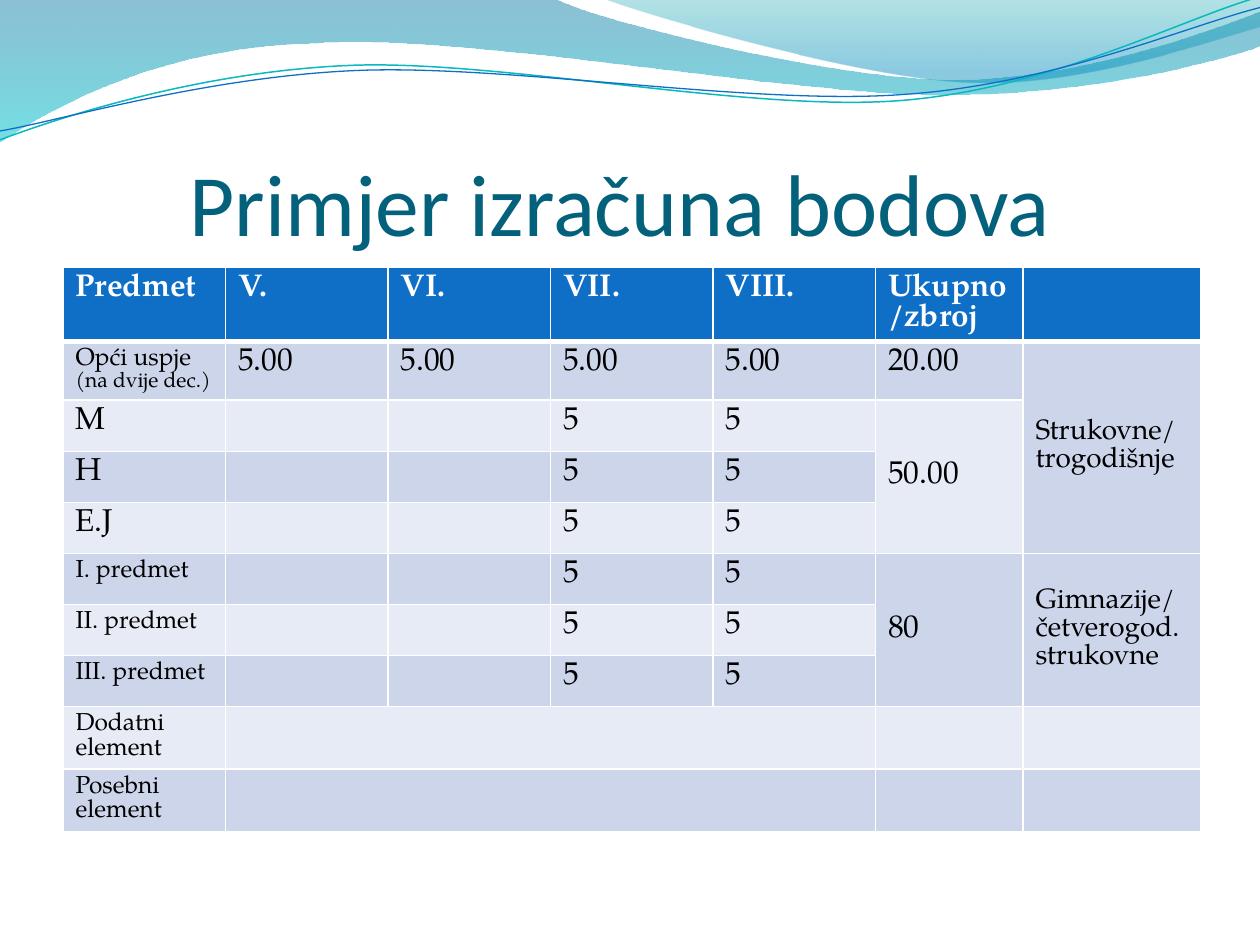
from dataclasses import dataclass

from lxml import etree
from pptx import Presentation
from pptx.dml.color import RGBColor
from pptx.enum.text import MSO_ANCHOR, MSO_AUTO_SIZE, PP_ALIGN
from pptx.oxml.ns import qn
from pptx.util import Inches, Pt

BOTTOM = MSO_ANCHOR.BOTTOM
MIDDLE = MSO_ANCHOR.MIDDLE
CENTER = PP_ALIGN.CENTER
NO_AUTOFIT = MSO_AUTO_SIZE.NONE
TITLE_ONLY_LAYOUT = 5
UNITS_PER_INCH = 100


@dataclass(frozen=True)
class Theme:
    title_font: str = "Calibri"
    body_font: str = "TeX Gyre Pagella"
    title_color: str = "04617B"
    blue: str = "0F6FC6"
    teal: str = "0AB8BF"
    white: str = "FFFFFF"
    black: str = "000000"
    bands: tuple = ("E7EBF5", "CCD5EA")
    title_size: int = 50
    body_size: int = 18
    group_size: int = 16
    label_size: int = 14
    note_size: int = 12


THEME = Theme()

BACK_WAVE = [
    (0, 0), (4.4, -0.01),
    (4.76, 0.17, 6.64, 0.63, 7.58, 0.63), (8.53, 0.63, 9.58, 0.26, 10, 0.09),
    (10.01, 0.36),
    (9.83, 0.44, 8.7, 0.76, 7.46, 0.75), (6.22, 0.75, 3.82, 0.28, 2.57, 0.34),
    (1.29, 0.36, 0.46, 0.83, -0.01, 1.13), (0, 0),
]
FRONT_WAVE = [
    (4.79, -0.01),
    (5.09, 0.11, 6.82, 0.62, 7.69, 0.65), (8.56, 0.69, 9.61, 0.32, 10, 0.21),
    (10, 0), (4.79, -0.01),
]
TEAL_LINE = [
    (0, 1.11),
    (0.48, 0.93, 1.58, 0.57, 2.77, 0.52), (3.95, 0.47, 5.93, 0.89, 7.13, 0.8),
    (8.33, 0.71, 9.38, 0.15, 9.98, -0.02),
]
BLUE_LINE = [
    (0, 1.04),
    (0.47, 0.96, 1.64, 0.61, 2.83, 0.56), (4.03, 0.51, 5.97, 0.84, 7.17, 0.75),
    (8.36, 0.67, 9.41, 0.21, 10, 0.06),
]

COLUMN_WIDTHS = [1.29] * 5 + [1.17, 1.41]
ROW_HEIGHT = Pt(29.2)
GRADES = ["", "", "5", "5"]
ROWS = [
    ["Predmet", "V.", "VI.", "VII.", "VIII.", "Ukupno/zbroj"],
    ["Opći uspje\n(na dvije dec.)"] + ["5.00"] * 4 + ["20.00", "Strukovne/ trogodišnje"],
    ["M", *GRADES, "50.00"],
    ["H", *GRADES],
    ["E.J", *GRADES],
    ["I. predmet", *GRADES, "80", "Gimnazije/ četverogod. strukovne"],
    ["II. predmet", *GRADES],
    ["III. predmet", *GRADES],
    ["Dodatni element"],
    ["Posebni element"],
]
MERGES = [
    ((1, 6), (4, 6)), ((2, 5), (4, 5)), ((5, 5), (7, 5)), ((5, 6), (7, 6)),
    ((8, 1), (8, 4)), ((9, 1), (9, 4)),
]
SMALL_LABEL_ROWS = {1, 5, 6, 7, 8, 9}
GROUP_COLUMN = 6


def rgb(value):
    return RGBColor.from_string(value)


def segment_points(segment):
    units = [round(value * UNITS_PER_INCH) for value in segment]
    return list(zip(units[::2], units[1::2]))


def add_curve(slide, segments, close):
    start, *points = [point for segment in segments for point in segment_points(segment)]
    builder = slide.shapes.build_freeform(*start, scale=Inches(1) / UNITS_PER_INCH)
    builder.add_line_segments(points, close=close)
    shape = builder.convert_to_shape()
    shape.shadow.inherit = False
    steps = iter(list(shape.element.spPr.iter(qn("a:lnTo"))))
    for segment in segments[1:]:
        step = next(steps)
        if len(segment) == 6:
            curve = etree.Element(qn("a:cubicBezTo"))
            step.addprevious(curve)
            for part in (step, next(steps), next(steps)):
                curve.append(part[0])
                part.getparent().remove(part)
    return shape


def add_wave(slide, segments, stops):
    shape = add_curve(slide, segments, True)
    shape.line.fill.background()
    shape.fill.gradient()
    shape.fill.gradient_angle = 270
    for stop, (position, color, _) in zip(shape.fill.gradient_stops, stops):
        stop.position = position
        stop.color.rgb = rgb(color)
    for element, (_, _, opacity) in zip(shape.element.spPr.iter(qn("a:srgbClr")), stops):
        etree.SubElement(element, qn("a:alpha"), val=str(opacity * 1000))


def add_wave_line(slide, segments, color, width):
    shape = add_curve(slide, segments, False)
    shape.fill.background()
    shape.line.color.rgb = rgb(color)
    shape.line.width = Pt(width)


def style_paragraph(paragraph, font_name, size, color, bold=False):
    font = paragraph.font
    font.name = font_name
    font.size = Pt(size)
    font.bold = bold
    font.color.rgb = rgb(color)


def set_title(slide, text):
    title = slide.shapes.title
    title.left, title.top = Inches(0.5), Inches(0.77)
    title.width, title.height = Inches(9), Inches(1.25)
    frame = title.text_frame
    frame.text = text
    frame.word_wrap = True
    frame.auto_size = NO_AUTOFIT
    frame.vertical_anchor = BOTTOM
    frame.margin_left = frame.margin_right = frame.margin_bottom = 0
    frame.margin_top = Inches(0.05)
    paragraph = frame.paragraphs[0]
    paragraph.alignment = CENTER
    style_paragraph(paragraph, THEME.title_font, THEME.title_size, THEME.title_color)
    title.element.getparent().append(title.element)


def set_borders(cell, is_header):
    properties = cell._tc.get_or_add_tcPr()
    for side in "LRTB":
        width = 3 if is_header and side == "B" else 1
        line = etree.SubElement(properties, qn(f"a:ln{side}"), w=str(Pt(width)))
        fill = etree.SubElement(line, qn("a:solidFill"))
        etree.SubElement(fill, qn("a:srgbClr"), val=THEME.white)


def text_size(row, column, line):
    if column == 0 and row in SMALL_LABEL_ROWS:
        return THEME.note_size if line else THEME.label_size
    return THEME.group_size if column == GROUP_COLUMN else THEME.body_size


def format_cell(cell, row, column, text):
    is_header = row == 0
    set_borders(cell, is_header)
    cell.fill.solid()
    cell.fill.fore_color.rgb = rgb(THEME.blue if is_header else THEME.bands[row % 2])
    if cell.is_merge_origin and cell.span_height > 1:
        cell.vertical_anchor = MIDDLE
    if not text:
        return
    cell.text = text
    color = THEME.white if is_header else THEME.black
    for line, paragraph in enumerate(cell.text_frame.paragraphs):
        style_paragraph(paragraph, THEME.body_font, text_size(row, column, line), color, is_header)


def add_points_table(slide):
    frame = slide.shapes.add_table(
        len(ROWS), len(COLUMN_WIDTHS), Inches(0.5), Inches(2.12),
        Inches(sum(COLUMN_WIDTHS)), Inches(4.8),
    )
    table = frame.table
    for column, width in zip(table.columns, COLUMN_WIDTHS):
        column.width = Inches(width)
    for row in table.rows:
        row.height = ROW_HEIGHT
    frame.height = Inches(4.8)
    for first, last in MERGES:
        table.cell(*first).merge(table.cell(*last))
    for row, texts in enumerate(ROWS):
        for column in range(len(COLUMN_WIDTHS)):
            text = texts[column] if column < len(texts) else ""
            format_cell(table.cell(row, column), row, column, text)


def main():
    presentation = Presentation()
    presentation.slide_width, presentation.slide_height = Inches(10), Inches(7.5)
    slide = presentation.slides.add_slide(presentation.slide_layouts[TITLE_ONLY_LAYOUT])
    add_wave(slide, BACK_WAVE, [(0, "0074A1", 45), (1, "00C6CF", 55)])
    add_wave(slide, FRONT_WAVE, [(0, "00A1A9", 30), (0.8, "008BBF", 45)])
    add_wave_line(slide, TEAL_LINE, THEME.teal, 0.85)
    add_wave_line(slide, BLUE_LINE, THEME.blue, 0.75)
    set_title(slide, "Primjer izračuna bodova ")
    add_points_table(slide)
    presentation.save("out.pptx")


if __name__ == "__main__":
    main()
